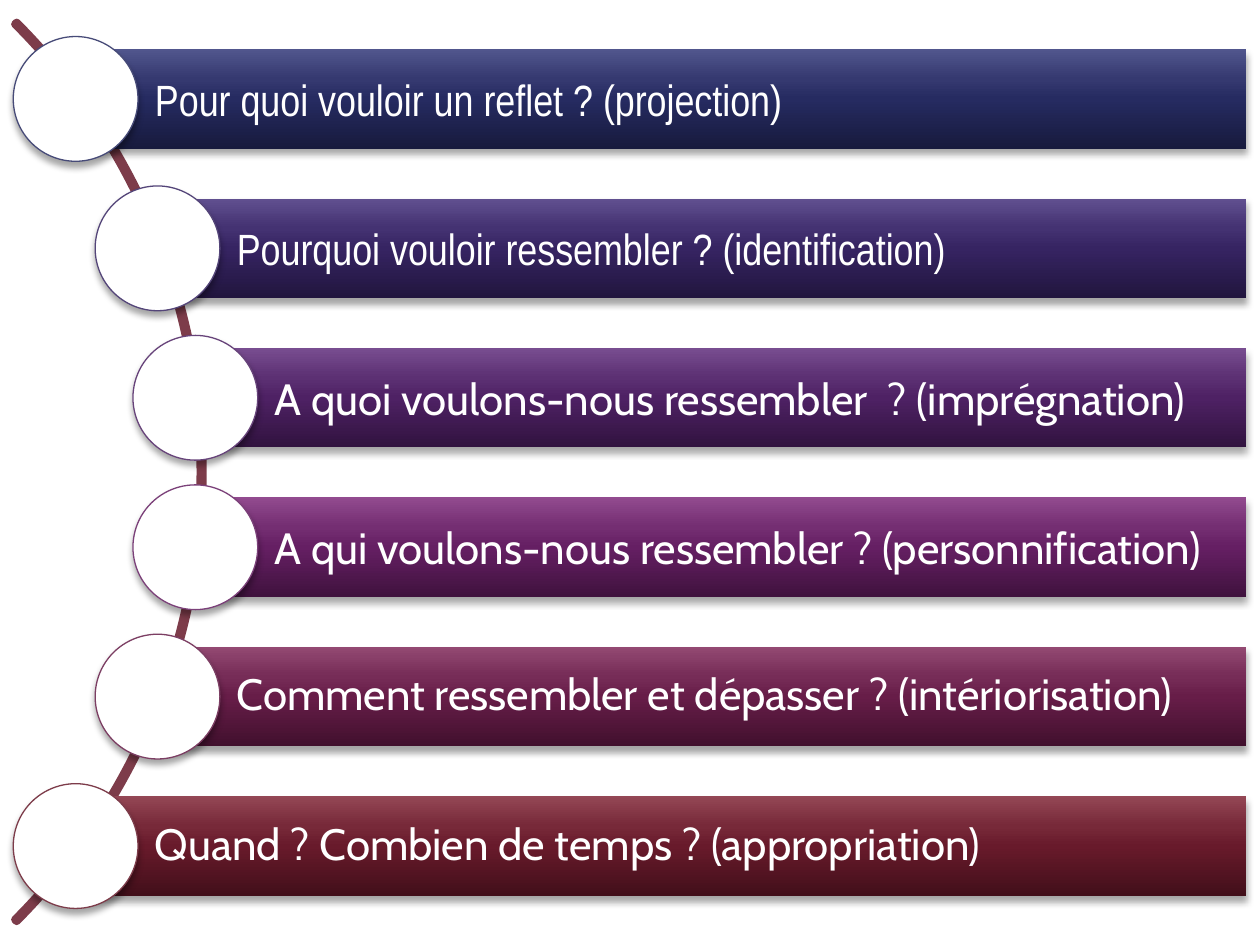
from lxml import etree
from pptx import Presentation
from pptx.dml.color import RGBColor
from pptx.enum import shapes, text
from pptx.oxml import ns
from pptx.util import Inches, Pt

WHITE = RGBColor(0xFF, 0xFF, 0xFF)
BLACK = RGBColor(0, 0, 0)
WINE = RGBColor(0x7D, 0x3C, 0x4A)
STOPS = (0, 50, 70, 100)
RIGHT, TOP, STEP = 9.89, 0.39, 1.186
BAR, DISC = 0.79, 0.99

ROWS = [
    ("Pour quoi vouloir un reflet ? (projection)", 0.6, "Arial Narrow", False,
     "171A3D 262B61 353970 51568D", "474B78"),
    ("Pourquoi vouloir ressembler ? (identification)", 1.25, "Arial Narrow", False,
     "21153E 362462 443272 604F8F", "544579"),
    ("A quoi voulons-nous ressembler  ? (imprégnation)", 1.55, "Cabin", False,
     "31133F 4E2164 5C3073 784D90", "67437A"),
    ("A qui voulons-nous ressembler ? (personnification)", 1.55, "Cabin", False,
     "40123E 651F63 742E72 924B8F", "7B4079"),
    ("Comment ressembler et dépasser ? (intériorisation)", 1.25, "Cabin", True,
     "41102D 671D48 762C57 934972", "7C3E63"),
    ("Quand ? Combien de temps ? (appropriation)", 0.6, "Cabin", True,
     "420F1A 681A2B 772939 944755", "7D3C4A"),
]


def add(root, tag, **attrs):
    """Append a DrawingML element with the given attributes."""
    return etree.SubElement(root, ns.qn(tag), {k: str(v) for k, v in attrs.items()})


def draw(slide, kind, box, line=None, width=0.75):
    """Add a preset shape without a shadow, outlined if a line colour is given."""
    shape = slide.shapes.add_shape(kind, *(Inches(v) for v in box))
    shape.shadow.inherit = False
    if line is None:
        shape.line.fill.background()
    else:
        shape.line.color.rgb = line
        shape.line.width = Pt(width)
    return shape


def shade(shape):
    """Give a shape a soft shadow below it."""
    root = shape.element.spPr.find(ns.qn("a:effectLst"))
    cast = add(root, "a:outerShdw", blurRad=Pt(4), dist=Pt(3), dir=5400000,
               rotWithShape=0)
    tint = add(cast, "a:srgbClr", val=BLACK)
    add(tint, "a:alpha", val=35000)


def blend(shape, tones):
    """Fill a shape with an upward gradient of evenly listed tones."""
    shape.fill.gradient()
    shape.fill.gradient_angle = 90
    root = shape.element.spPr.find(".//" + ns.qn("a:gsLst"))
    for stop in list(root):
        root.remove(stop)
    for place, tone in zip(STOPS, tones):
        add(add(root, "a:gs", pos=place * 1000), "a:srgbClr", val=tone)


def write(shape, words, font="Cabin", size=25, color=WHITE, tight=False):
    """Write one left-aligned line of text in a shape."""
    frame = shape.text_frame
    frame.word_wrap = True
    frame.vertical_anchor = text.MSO_ANCHOR.MIDDLE
    frame.margin_left = Inches(0.63)
    frame.margin_right = frame.margin_top = frame.margin_bottom = Inches(0.07)
    para = frame.paragraphs[0]
    para.alignment = text.PP_ALIGN.LEFT
    if tight:
        para.line_spacing = 0.9
        para.space_after = Pt(size * 0.35)
    run = para.add_run()
    run.text = words
    run.font.name = font
    run.font.size = Pt(size)
    run.font.color.rgb = color


def curve(slide, box):
    """Draw the arc that links the discs."""
    arc = draw(slide, shapes.MSO_SHAPE.BLOCK_ARC, box, WINE, 4.33)
    arc.fill.background()
    for i, value in enumerate((189, 27, 0.002)):
        arc.adjustments[i] = value


def row(slide, box, words, font, tight, tones, edge):
    """Draw a labelled bar with a disc centred on its left end."""
    left, top, _, high = box
    bar = draw(slide, shapes.MSO_SHAPE.RECTANGLE, box)
    blend(bar, tones.split())
    shade(bar)
    write(bar, words, font=font, tight=tight)
    spot = (left - DISC / 2, top + (high - DISC) / 2, DISC, DISC)
    disc = draw(slide, shapes.MSO_SHAPE.OVAL, spot, RGBColor.from_string(edge))
    disc.fill.solid()
    disc.fill.fore_color.rgb = WHITE
    shade(disc)


def main():
    """Build and save the slide."""
    deck = Presentation()
    deck.slide_width, deck.slide_height = Inches(10), Inches(7.5)
    slide = deck.slides.add_slide(deck.slide_layouts[6])
    curve(slide, (-8.48, -1.3, 10.09, 10.09))
    for i, (words, left, *style) in enumerate(ROWS):
        row(slide, (left, TOP + i * STEP, RIGHT - left, BAR), words, *style)
    deck.save("out.pptx")


if __name__ == "__main__":
    main()
